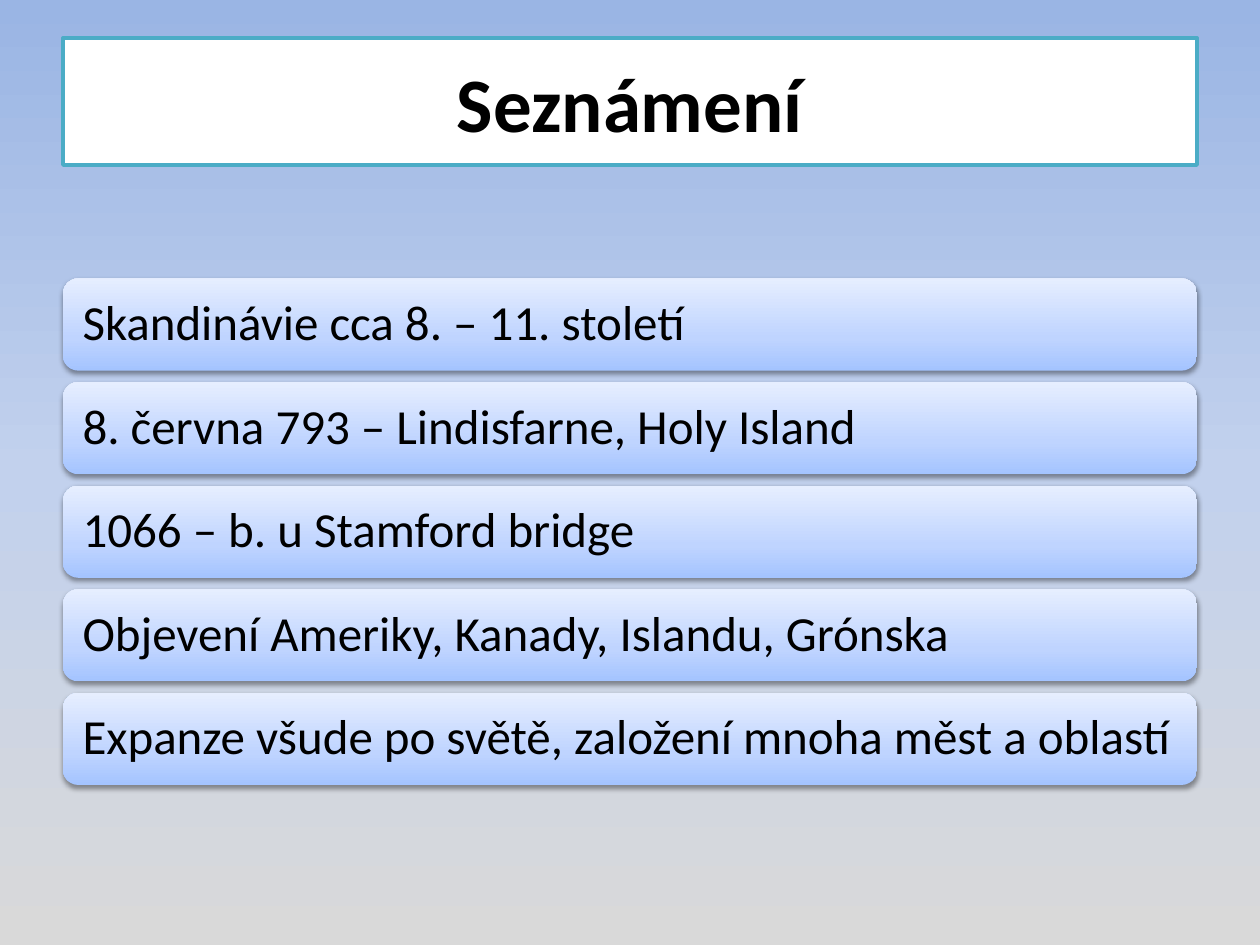
from lxml.etree import SubElement
from pptx import Presentation
from pptx.dml.color import RGBColor
from pptx.enum.shapes import MSO_SHAPE
from pptx.enum.text import MSO_ANCHOR, PP_ALIGN
from pptx.oxml.ns import qn
from pptx.util import Inches, Pt

BLACK = RGBColor(0x00, 0x00, 0x00)
WHITE = RGBColor(0xFF, 0xFF, 0xFF)
TEAL = RGBColor(0x4B, 0xAC, 0xC6)
BACKGROUND_STOPS = [
    (0, RGBColor(0x9A, 0xB5, 0xE4)),
    (50, RGBColor(0xC2, 0xD1, 0xED)),
    (100, RGBColor(0xD9, 0xD9, 0xD9)),
]
BAR_STOPS = [
    (0, RGBColor(0xA4, 0xC4, 0xFF)),
    (35, RGBColor(0xBF, 0xD4, 0xFF)),
    (100, RGBColor(0xE6, 0xEE, 0xFF)),
]
FACTS = [
    "Skandinávie cca 8. – 11. století",
    "8. června 793 – Lindisfarne, Holy Island",
    "1066 – b. u Stamford bridge",
    "Objevení Ameriky, Kanady, Islandu, Grónska",
    "Expanze všude po světě, založení mnoha měst a oblastí",
]


def set_gradient(owner, fill, stops, angle):
    """Fill owner with any number of stops; angle runs counter-clockwise."""
    fill.gradient()
    fill.gradient_angle = angle
    stop_list = owner.element.find(".//" + qn("a:gsLst"))
    for stop in list(stop_list):
        stop_list.remove(stop)
    for percent, color in stops:
        stop = SubElement(stop_list, qn("a:gs"), pos=str(percent * 1000))
        SubElement(stop, qn("a:srgbClr"), val=str(color))


def add_soft_shadow(shape):
    shape.shadow.inherit = False
    effects = shape.element.spPr.find(qn("a:effectLst"))
    shadow = SubElement(effects, qn("a:outerShdw"), blurRad=str(Pt(3.1)),
                        dist=str(Pt(1.6)), dir="5400000", rotWithShape="0")
    color = SubElement(shadow, qn("a:srgbClr"), val=str(BLACK))
    SubElement(color, qn("a:alpha"), val="38000")


def write_text(shape, text, size, bold=False, align=PP_ALIGN.LEFT,
               line_spacing=1.0, inset=None):
    frame = shape.text_frame
    frame.word_wrap = True
    frame.vertical_anchor = MSO_ANCHOR.MIDDLE
    if inset is not None:
        frame.margin_left = frame.margin_right = inset
        frame.margin_top = frame.margin_bottom = inset
    paragraph = frame.paragraphs[0]
    paragraph.alignment = align
    paragraph.line_spacing = line_spacing
    run = paragraph.add_run()
    run.text = text
    run.font.name = "Calibri"
    run.font.size = Pt(size)
    run.font.bold = bold
    run.font.color.rgb = BLACK


def place_title(slide, text, left, top, width, height):
    title = slide.shapes.title
    title.left, title.top, title.width, title.height = left, top, width, height
    title.fill.solid()
    title.fill.fore_color.rgb = WHITE
    title.line.color.rgb = TEAL
    title.line.width = Pt(2)
    write_text(title, text, size=44, bold=True, align=PP_ALIGN.CENTER)


def add_fact_bars(slide, facts, left, top, width, height, gap):
    """Stack one bar per fact, evenly spaced within the given box."""
    bar_height = (height - gap * (len(facts) - 1)) // len(facts)
    for index, fact in enumerate(facts):
        bar_top = top + index * (bar_height + gap)
        bar = slide.shapes.add_shape(MSO_SHAPE.ROUNDED_RECTANGLE,
                                     left, bar_top, width, bar_height)
        set_gradient(bar, bar.fill, BAR_STOPS, angle=90)
        bar.line.fill.background()
        add_soft_shadow(bar)
        write_text(bar, fact, size=28, line_spacing=0.9, inset=Inches(0.12))


def main():
    presentation = Presentation()
    presentation.slide_width = Inches(10)
    presentation.slide_height = Inches(7.5)
    slide = presentation.slides.add_slide(presentation.slide_layouts[5])
    set_gradient(slide, slide.background.fill, BACKGROUND_STOPS, angle=270)
    place_title(slide, "Seznámení",
                Inches(0.5), Inches(0.3), Inches(9), Inches(1.01))
    add_fact_bars(slide, FACTS, Inches(0.5), Inches(2.21), Inches(9),
                  Inches(4.02), gap=Inches(0.09))
    presentation.save("out.pptx")


if __name__ == "__main__":
    main()
